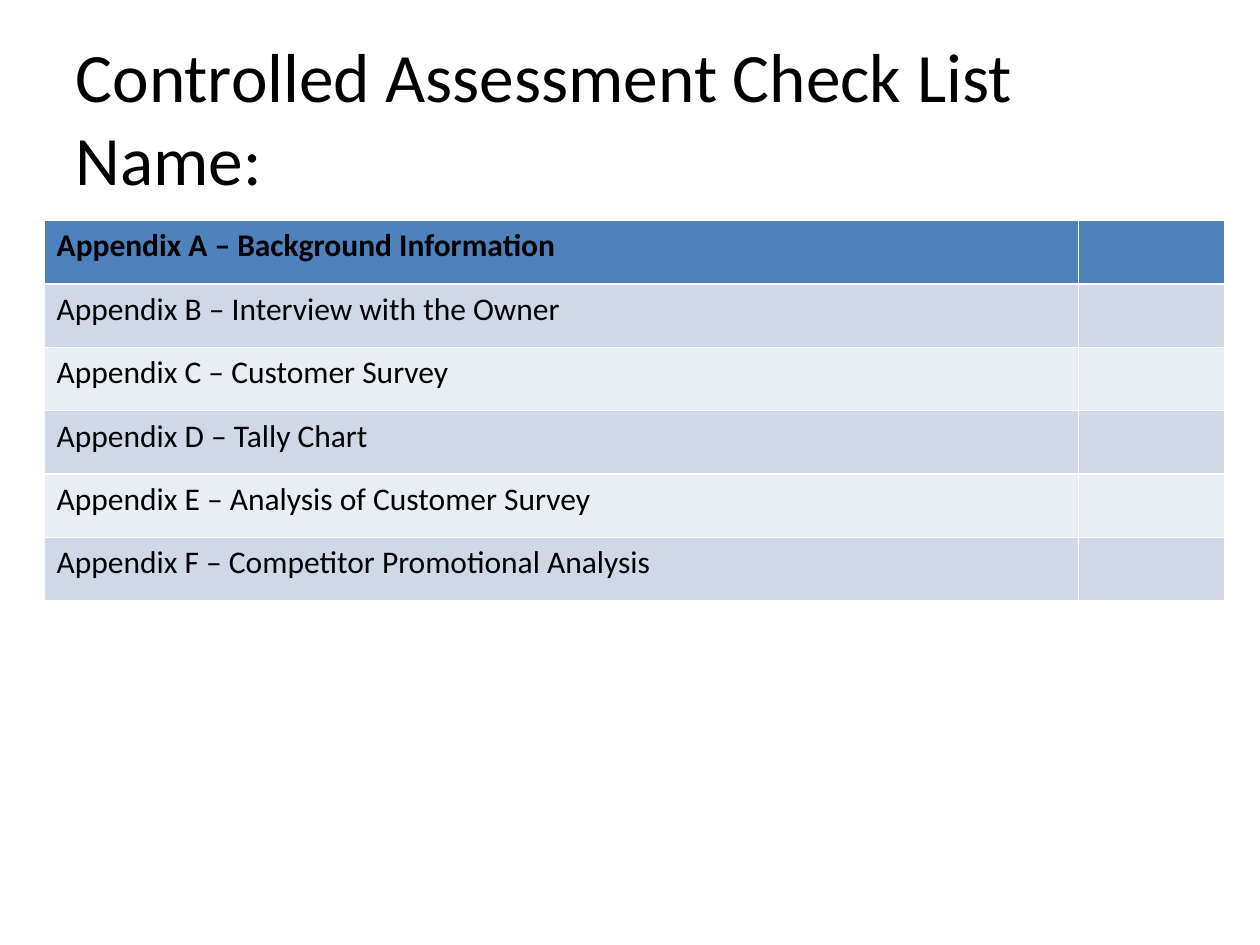
from pptx import Presentation
from pptx import util as u
from pptx.dml.color import RGBColor
from pptx.enum import text

hues = {"ink": "000000", "head": "4F81BD", "dark": "D0D8E8", "light": "E9EDF4"}
items = [
    "Background Information",
    "Interview with the Owner",
    "Customer Survey",
    "Tally Chart",
    "Analysis of Customer Survey",
    "Competitor Promotional Analysis",
]


def style(font, **form):
    for key, val in form.items():
        setattr(font, key, val)
    font.color.rgb = RGBColor.from_string(hues["ink"])


deck = Presentation()
deck.slide_width, deck.slide_height = u.Inches(10), u.Inches(7.5)
slide = deck.slides.add_slide(deck.slide_layouts[5])

title = slide.shapes.title
place = {"left": 0.5, "top": 0.3, "width": 9, "height": 1.25}
for key, val in place.items():
    setattr(title, key, u.Inches(val))
frame = title.text_frame
frame.text = "Controlled Assessment Check List\vName:"
frame.auto_size = text.MSO_AUTO_SIZE.NONE
frame.vertical_anchor = text.MSO_ANCHOR.MIDDLE
para = frame.paragraphs[0]
para.alignment = text.PP_ALIGN.LEFT
for run in para.runs:
    style(run.font, name="Calibri", size=u.Pt(39.6), bold=False)

grid = slide.shapes.add_table(
    len(items), 2, u.Inches(0.35), u.Inches(1.75), u.Inches(9.37), u.Inches(3.02)
).table
for col, wide in zip(grid.columns, (8.21, 1.16)):
    col.width = u.Inches(wide)

for i, item in enumerate(items):
    cell = grid.cell(i, 0)
    cell.text = f"Appendix {'ABCDEF'[i]} – {item}"
    run = cell.text_frame.paragraphs[0].runs[0]
    style(run.font, name="Calibri", size=u.Pt(18), bold=i == 0)
    hue = "head" if i == 0 else "dark" if i % 2 else "light"
    for cell in grid.rows[i].cells:
        cell.fill.solid()
        cell.fill.fore_color.rgb = RGBColor.from_string(hues[hue])

deck.save("out.pptx")
